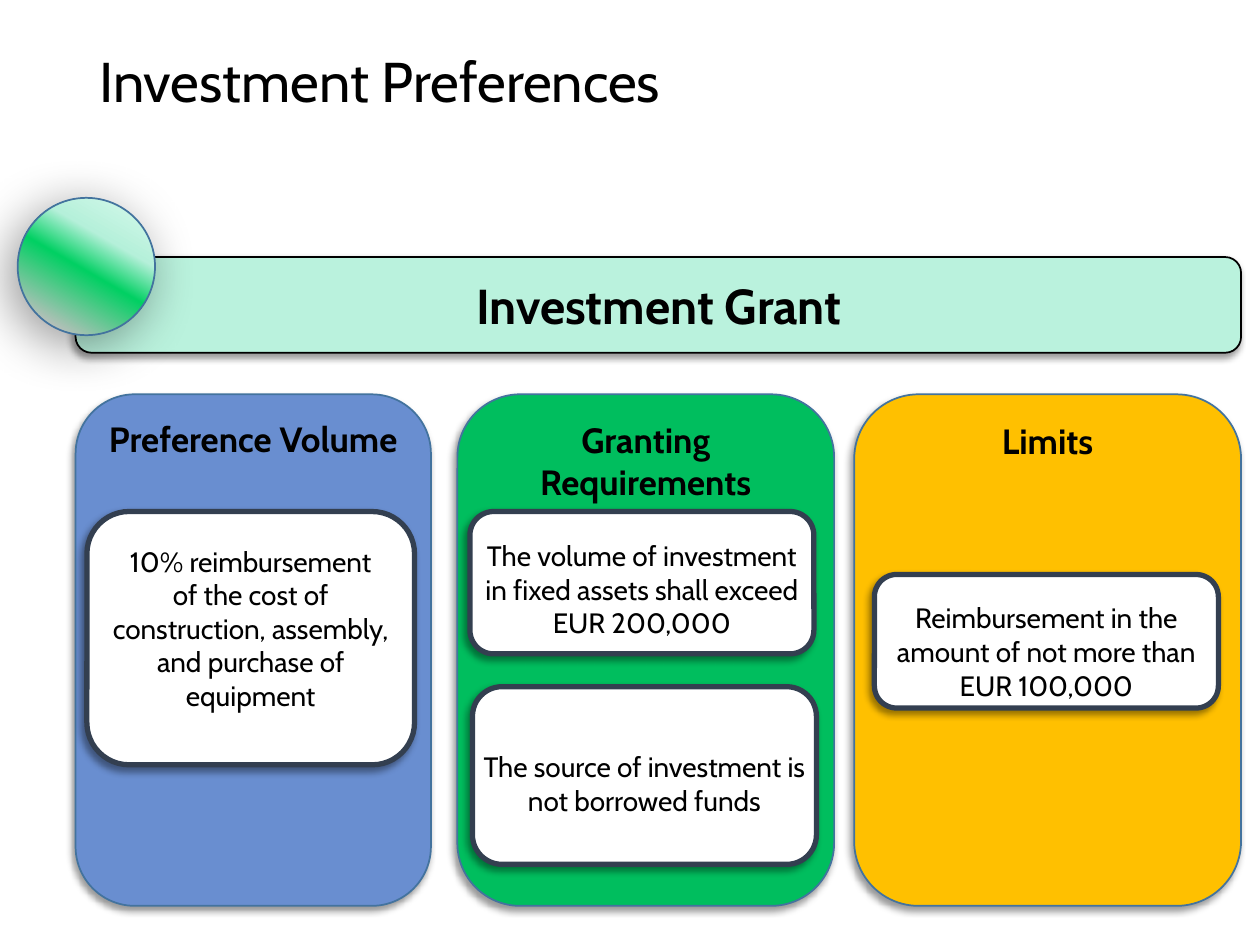
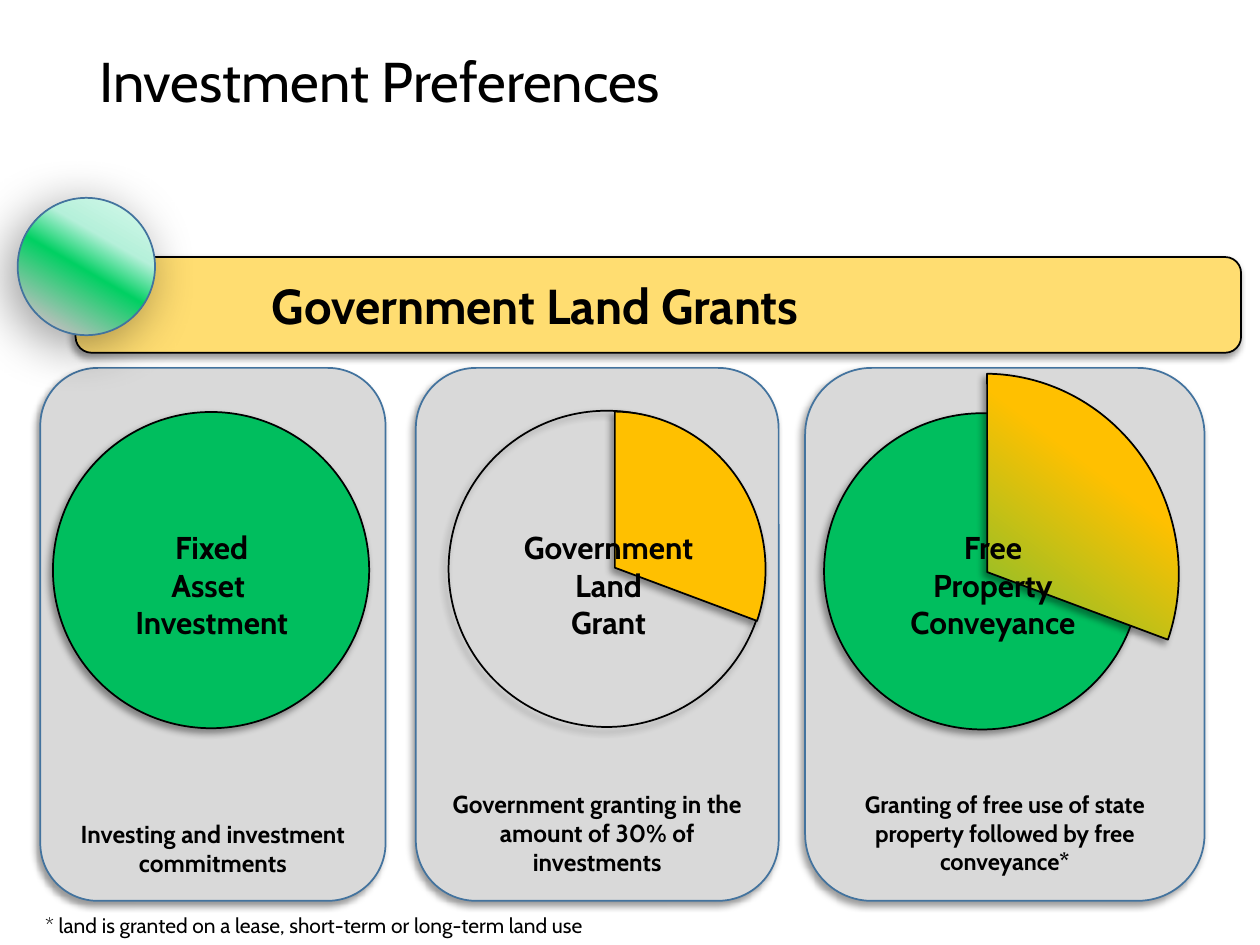
from lxml import etree
from pptx import Presentation
from pptx import util as u
from pptx.dml import color
from pptx.enum import shapes, text
from pptx.oxml import ns

FONT = "Cabin"
BLACK, WHITE, GREEN, GOLD = "000000", "FFFFFF", "00BE5E", "FFC000"
BLUE, GREY, EDGE, SLATE = "698ED0", "D9D9D9", "43739E", "333F50"
MINT, SAND = "BAF2DD", "FFDD71"
ORB = [(12, "BFBFBF"), (48, "01D063"), (68, "B5F0DA"), (100, "DAFAED")]
WEDGE = [(10, GREEN), (74, GOLD)]
KIND = shapes.MSO_SHAPE
TOP, MID, LOW = (text.MSO_ANCHOR.TOP, text.MSO_ANCHOR.MIDDLE,
                 text.MSO_ANCHOR.BOTTOM)
LEFT, MIDST = text.PP_ALIGN.LEFT, text.PP_ALIGN.CENTER


def rgb(code):
    return color.RGBColor.from_string(code)


def add_sub(parent, tag, **attrs):
    node = etree.SubElement(parent, ns.qn(tag))
    for key, val in attrs.items():
        node.set(key, str(val))
    return node


def blend(shape, stops, angle):
    grad = add_sub(shape.element.spPr, "a:gradFill", rotWithShape=1)
    items = add_sub(grad, "a:gsLst")
    for pos, code in stops:
        stop = add_sub(items, "a:gs", pos=pos * 1000)
        add_sub(stop, "a:srgbClr", val=code)
    add_sub(grad, "a:lin", ang=angle * 60000, scaled=0)


def shade(shape, blur, dist):
    shape.shadow.inherit = False
    holder = shape.element.spPr.find(ns.qn("a:effectLst"))
    cast = add_sub(holder, "a:outerShdw", blurRad=u.Pt(blur),
                   dist=u.Pt(dist), dir=135 * 60000, algn="tr",
                   rotWithShape=0)
    tint = add_sub(cast, "a:srgbClr", val=BLACK)
    add_sub(tint, "a:alpha", val=40000)


def draw(slide, kind, box, fill, line=BLACK, width=1, turn=0, angle=0,
         blur=4, dist=3):
    shape = slide.shapes.add_shape(kind, *map(u.Inches, box))
    shape.rotation = turn
    if fill is None:
        shape.fill.background()
    elif isinstance(fill, list):
        blend(shape, fill, angle)
    else:
        shape.fill.solid()
        shape.fill.fore_color.rgb = rgb(fill)
    shape.line.color.rgb = rgb(line)
    shape.line.width = u.Pt(width)
    shade(shape, blur, dist)
    return shape


def write(shape, lines, size, bold=False, align=MIDST, anchor=TOP,
          wrap=True, pad=None, space=None):
    frame = shape.text_frame
    frame.word_wrap = wrap
    frame.vertical_anchor = anchor
    if pad is not None:
        frame.margin_left = frame.margin_right = frame.margin_bottom = 0
        frame.margin_top = u.Inches(pad)
    for i, line in enumerate(lines):
        para = frame.add_paragraph() if i else frame.paragraphs[0]
        para.alignment = align
        if space:
            para.line_spacing = space
        run = para.add_run()
        run.text = line
        run.font.size = u.Pt(size)
        run.font.name = FONT
        run.font.bold = bold
        run.font.color.rgb = rgb(BLACK)


def label(slide, box, lines, size, **style):
    write(slide.shapes.add_textbox(*map(u.Inches, box)), lines, size, **style)


def head(slide, fill, name, left, width, align):
    label(slide, (0.69, 0, 8.62, 1.34), ["Investment Preferences"], 32,
          align=LEFT, anchor=MID, space=0.9)
    x, y = 0.6, 2.04
    draw(slide, KIND.ROUNDED_RECTANGLE, (x, y, 9.25, 0.76), fill)
    draw(slide, KIND.OVAL, (x - 0.46, y - 0.47, 1.09, 1.09), ORB, EDGE,
         angle=300, blur=30, dist=7)
    label(slide, (left, y + 0.1, width, 0.57), [name], 28, bold=True,
          align=align, wrap=False)


def panel(slide, box, fill, lines, size, anchor):
    shape = draw(slide, KIND.ROUNDED_RECTANGLE, box, fill, EDGE)
    write(shape, lines, size, bold=True, anchor=anchor)


def column(slide, box, fill, name, cards):
    panel(slide, box, fill, [name], 20, TOP)
    x, y = box[:2]
    for (dx, dy, w, h), lines, pad, anchor in cards:
        card = draw(slide, KIND.ROUNDED_RECTANGLE, (x + dx, y + dy, w, h),
                    WHITE, SLATE, 3)
        write(card, lines, 16, anchor=anchor, pad=pad)


def plate(slide, box, note, size, disc, pie, words, spot):
    panel(slide, box, GREY, [note], size, LOW)
    x, y = box[:2]
    dx, dy, fill, turn = disc
    draw(slide, KIND.OVAL, (x + dx, y + dy, 2.51, 2.51), fill, turn=turn)
    if pie:
        (px, py, w, h), paint = pie
        part = draw(slide, KIND.PIE, (x + px, y + py, w, h), paint,
                    turn=261.9, angle=45)
        part.adjustments[0] = 4.857
        part.adjustments[1] = 71.164
    left, wide = spot
    label(slide, (x + left, y + 1.22, wide, 1.01), words, 18, bold=True,
          wrap=False)


def grant(slide):
    head(slide, MINT, "Investment Grant", 3.48, 3.5, MIDST)
    top, tall = 3.13, 4.06
    column(slide, (0.6, top, 2.82, tall), BLUE, "Preference Volume", [
        ((0.09, 0.93, 2.6, 2.01),
         ["10% reimbursement",
          "of the cost of construction, assembly, and purchase of equipment"],
         0.16, TOP)])
    column(slide, (3.63, top, 2.99, tall), GREEN, "Granting Requirements", [
        ((0.1, 0.93, 2.73, 1.13),
         ["The volume of investment in fixed assets shall exceed EUR 200,000"],
         0.16, TOP),
        ((0.12, 2.32, 2.73, 1.41),
         ["The source of investment is not borrowed funds"], 0.43, TOP)])
    column(slide, (6.78, top, 3.07, tall), GOLD, "Limits", [
        ((0.16, 1.43, 2.73, 1.06),
         ["Reimbursement in the amount of not more than EUR 100,000"],
         0.16, MID)])


def land(slide):
    top, tall = 2.92, 4.23
    plate(slide, (0.32, top, 2.74, tall),
          "Investing and investment commitments", 14,
          (0.1, 0.35, GREEN, 0), None,
          ["Fixed", "Asset ", "Investment"], (0.6, 1.52))
    plate(slide, (3.3, top, 2.88, tall),
          "Government granting in the amount of 30% of investments", 14,
          (0.26, 0.34, None, 109.6), ((0.34, 0.39, 2.48, 2.39), GOLD),
          ["Government", "Land", "Grant"], (0.7, 1.66))
    plate(slide, (6.39, top, 3.17, tall),
          "Granting of free use of state property followed by free "
          "conveyance*", 13.5,
          (0.15, 0.36, GREEN, 0), ((-0.13, 0.1, 3.15, 3.04), WEDGE),
          ["Free", "Property", "Conveyance"], (0.68, 1.62))
    head(slide, SAND, "Government Land Grants", 2.06, 4.78, LEFT)
    label(slide, (0.26, 7.19, 4.83, 0.3),
          ["* land is granted on a lease, short-term or long-term land use"],
          12, align=LEFT, wrap=False)


def main():
    deck = Presentation()
    deck.slide_width, deck.slide_height = u.Inches(10), u.Inches(7.5)
    for build in (grant, land):
        build(deck.slides.add_slide(deck.slide_layouts[6]))
    deck.save("out.pptx")


if __name__ == "__main__":
    main()
